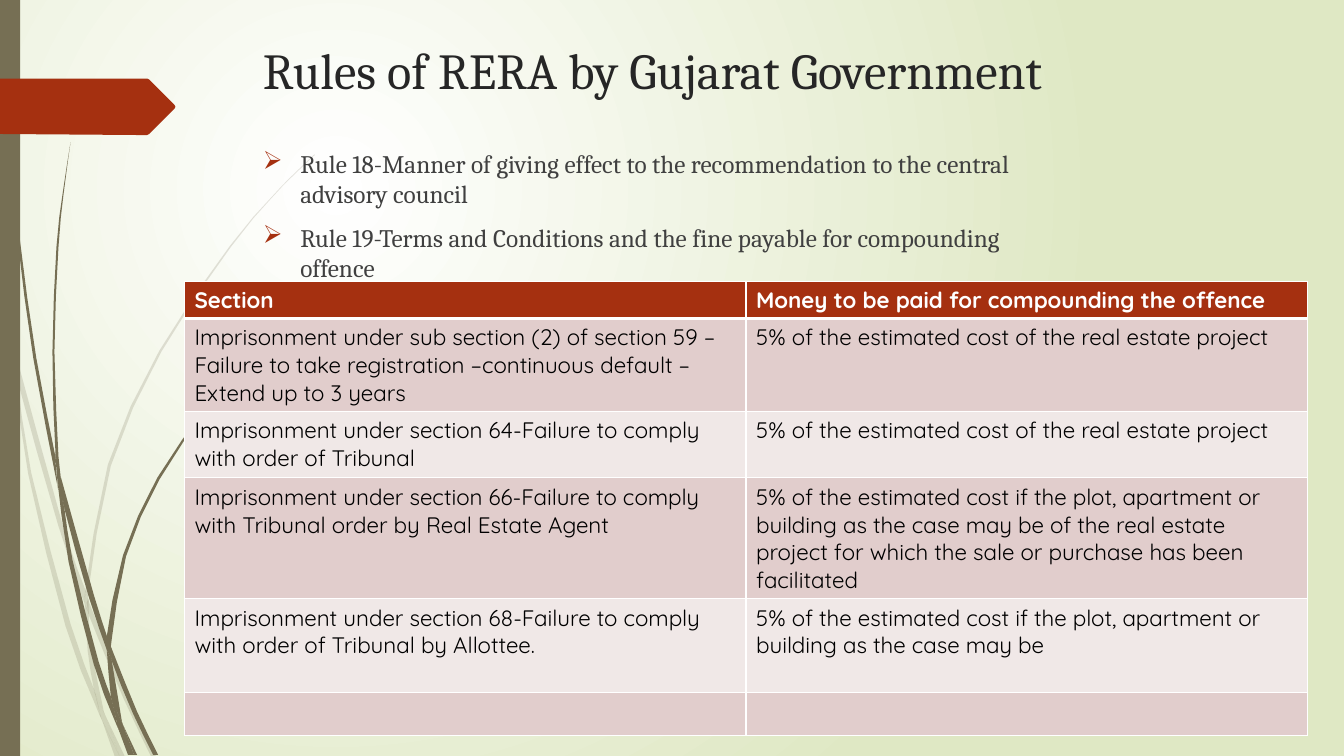
from lxml.etree import SubElement
from pptx import Presentation
from pptx.dml.color import RGBColor
from pptx.enum.shapes import MSO_SHAPE
from pptx.enum.text import MSO_ANCHOR
from pptx.oxml import parse_xml
from pptx.oxml.ns import nsdecls, qn
from pptx.util import Pt

PX = 9144
COLORS = {
    "white": "FFFFFF", "meadow": "DFE8C4", "olive": "766F54", "rust": "A53010",
    "title": "262626", "body": "404040", "black": "000000",
    "band_dark": "E1CDCC", "band_light": "F0E8E7",
}
SERIF, SANS = "Cambria", "Quicksand"

PALE_BLADES = [
    ([(11, 350), (9, 322), (0, 282)], [(0, 299), (10, 344), (11, 350)]),
    ([(14, 345), (17, 376), (58, 522), (84, 599)], [(85, 586), (62, 520), (14, 345)]),
    ([(88, 596), (88, 610), (123, 694), (150, 751)], [(155, 751), (127, 692), (92, 607), (88, 596)]),
    ([(119, 751), (124, 751)], [(105, 711), (119, 751)]),
    ([(11, 350), (28, 470), (65, 621), (92, 693), (101, 714)],
     [(99, 707), (93, 683), (70, 619), (31, 469), (17, 376), (11, 350)]),
    ([(84, 599), (87, 646), (93, 683), (96, 692), (105, 711)],
     [(103, 706), (91, 646), (88, 610), (88, 608), (84, 599)]),
    ([(312, 153), (289, 175), (268, 197), (228, 244), (158, 348), (107, 461), (85, 584), (85, 586)],
     [(88, 596), (88, 584), (110, 462), (160, 349), (229, 245), (268, 198), (290, 175), (312, 154)]),
    ([(101, 714), (114, 751)], [(119, 751), (101, 714)]),
    ([(88, 608), (88, 610), (88, 596)], [(85, 586), (84, 599), (88, 608)]),
    ([(93, 683), (99, 707), (101, 714), (119, 751)], [(105, 711), (96, 692), (93, 683)]),
]
DARK_BLADES = [
    ([(3, 0), (4, 48), (7, 110), (17, 233), (33, 355), (56, 477), (57, 481)],
     [(55, 457), (55, 453), (36, 355), (19, 232), (8, 109), (5, 48), (4, 0)]),
    ([(60, 472), (64, 505), (88, 592), (106, 645)], [(106, 633), (106, 631), (93, 590), (60, 472)]),
    ([(110, 641), (111, 656), (132, 708), (152, 749)], [(157, 749), (136, 706), (113, 649), (110, 641)]),
    ([(57, 477), (68, 557), (93, 659), (111, 708), (117, 722)],
     [(116, 717), (110, 691), (98, 657), (72, 556), (64, 505), (57, 477)]),
    ([(70, 141), (62, 193), (56, 245), (52, 349), (55, 449), (60, 472)],
     [(58, 453), (54, 349), (58, 245), (63, 193), (70, 141)]),
    ([(133, 749), (136, 749)], [(122, 719), (133, 749)]),
    ([(57, 477), (64, 505), (60, 472)], [(55, 449), (55, 453), (57, 477)]),
    ([(260, 344), (245, 358), (231, 373), (204, 405), (156, 474), (122, 551), (106, 631), (110, 641)],
     [(111, 633), (125, 552), (158, 476), (205, 406), (231, 374), (245, 359), (261, 344)]),
    ([(117, 722), (127, 749)], [(131, 749), (117, 722)]),
    ([(106, 645), (110, 691), (116, 706), (122, 719)],
     [(121, 716), (111, 656), (109, 651), (106, 645)]),
    ([(106, 645), (109, 651), (111, 656)], [(110, 641), (106, 631), (106, 645)]),
    ([(110, 691), (116, 717), (117, 722), (130, 749)], [(133, 749), (122, 719), (116, 706), (110, 691)]),
]
BANNER = [(0, 78), (146, 78), (148, 79), (173, 104), (174, 106), (173, 108),
          (148, 133), (146, 134), (136, 134), (0, 133)]
RULES = [
    "Rule 18-Manner of giving effect to the recommendation to the central advisory council",
    "Rule 19-Terms and Conditions and the fine payable for compounding offence",
]
PENALTIES = [
    ("Section", "Money to be paid for compounding the offence"),
    ("Imprisonment under sub section (2) of section 59 –Failure to take registration "
     "–continuous default – Extend up to 3 years",
     "5% of the estimated cost of the real estate project"),
    ("Imprisonment under section 64-Failure to comply with order of Tribunal",
     "5% of the estimated cost of the real estate project"),
    ("Imprisonment under section 66-Failure to comply with Tribunal order by Real Estate Agent",
     "5% of the estimated cost if the plot, apartment or building as the case may be of the "
     "real estate project for which the sale or purchase has been facilitated"),
    ("Imprisonment under section 68-Failure to comply with order of Tribunal by Allottee.",
     "5% of the estimated cost if the plot, apartment or building as the case may be"),
    ("", ""),
]
COLUMN_WIDTHS = [557, 557]
ROW_HEIGHTS = [37, 92, 66, 120, 93, 43]


def color(name):
    """Return a named colour."""
    return RGBColor.from_string(COLORS[name])


def lengths(*values):
    """Turn px into EMU."""
    return [value * PX for value in values]


def paint_background(page):
    """Fill the page with a radial gradient."""
    fill = page.background.fill
    fill.gradient()
    for stop, name, position in zip(fill.gradient_stops, ("white", "meadow"), (0, 1)):
        stop.color.rgb = color(name)
        stop.position = position
    linear = page.element.find(".//" + qn("a:lin"))
    radial = parse_xml(
        f'<a:path {nsdecls("a")} path="circle">'
        '<a:fillToRect l="50000" t="50000" r="100000" b="100000"/></a:path>')
    linear.getparent().replace(linear, radial)


def finish_shape(shape, name, alpha=100):
    """Give a shape a plain fill without line or shadow."""
    shape.shadow.inherit = False
    shape.fill.solid()
    shape.fill.fore_color.rgb = color(name)
    shape.line.fill.background()
    if alpha < 100:
        tone = shape.element.spPr.find(".//" + qn("a:srgbClr"))
        SubElement(tone, qn("a:alpha"), val=str(alpha * 1000))


def smooth(knots):
    """Add the Catmull-Rom midpoint between neighbouring knots."""
    padded = [knots[0], *knots, knots[-1]]
    points = []
    for a, b, c, d in zip(padded, padded[1:], padded[2:], padded[3:]):
        middle = tuple((9 * (q + r) - p - s) / 16 for p, q, r, s in zip(a, b, c, d))
        points += [b, middle]
    return points + [knots[-1]]


def add_outline(page, points, name, alpha=100):
    """Draw a closed filled outline."""
    scaled = [lengths(*point) for point in points]
    builder = page.shapes.build_freeform(*scaled[0], scale=1)
    builder.add_line_segments(scaled[1:], close=True)
    finish_shape(builder.convert_to_shape(), name, alpha)


def add_blades(page, blades, alpha):
    """Draw grass blades from their outward and returning edges."""
    for outward, returning in blades:
        add_outline(page, smooth(outward) + smooth(returning), "olive", alpha)


def style_text(para, font, size, name, bold=False):
    """Format every run of a paragraph."""
    for span in para.runs:
        span.font.name = font
        span.font.size = Pt(size)
        span.font.bold = bold
        span.font.color.rgb = color(name)


def add_text(page, place, lines, size, name):
    """Add a wrapping serif text box and return it."""
    box = page.shapes.add_textbox(*lengths(*place))
    frame = box.text_frame
    frame.word_wrap = True
    frame.vertical_anchor = MSO_ANCHOR.TOP
    frame.text = "\n".join(lines)
    for para in frame.paragraphs:
        style_text(para, SERIF, size, name)
    return box


def add_bullet(para):
    """Give a paragraph a hanging arrow bullet."""
    para.space_before = Pt(10)
    settings = para._p.get_or_add_pPr()
    indent = 37 * PX
    settings.set("marL", str(indent))
    settings.set("indent", str(-indent))
    tone = SubElement(settings, qn("a:buClr"))
    SubElement(tone, qn("a:srgbClr"), val=COLORS["rust"])
    SubElement(settings, qn("a:buSzPct"), val="100000")
    SubElement(settings, qn("a:buChar"), char="➢")


def add_borders(cell, bottom):
    """Draw white cell borders with the given bottom width."""
    settings = cell._tc.get_or_add_tcPr()
    for index, (side, width) in enumerate(zip("LRTB", (1, 1, 1, bottom))):
        settings.insert(index, parse_xml(
            f'<a:ln{side} {nsdecls("a")} w="{Pt(width)}"><a:solidFill>'
            f'<a:srgbClr val="{COLORS["white"]}"/></a:solidFill></a:ln{side}>'))


def add_penalty_table(page):
    """Add the banded table of compounding amounts."""
    table = page.shapes.add_table(
        len(ROW_HEIGHTS), len(COLUMN_WIDTHS),
        *lengths(183, 279, sum(COLUMN_WIDTHS), sum(ROW_HEIGHTS))).table
    for column, width in zip(table.columns, COLUMN_WIDTHS):
        column.width = width * PX
    for index, (row, height) in enumerate(zip(table.rows, ROW_HEIGHTS)):
        row.height = height * PX
        header = index == 0
        band = "rust" if header else ("band_light", "band_dark")[index % 2]
        for cell, text in zip(row.cells, PENALTIES[index]):
            cell.text = text
            cell.fill.solid()
            cell.fill.fore_color.rgb = color(band)
            style_text(cell.text_frame.paragraphs[0], SANS, 16,
                       "white" if header else "black", header)
            add_borders(cell, 3 if header else 1)


def main():
    """Build the slide and save it."""
    deck = Presentation()
    deck.slide_width, deck.slide_height = lengths(1333, 750)
    page = deck.slides.add_slide(deck.slide_layouts[6])
    paint_background(page)
    add_blades(page, PALE_BLADES, 20)
    add_blades(page, DARK_BLADES, 100)
    edge = page.shapes.add_shape(MSO_SHAPE.RECTANGLE, *lengths(0, 0, 20, 750))
    finish_shape(edge, "olive")
    add_outline(page, BANNER, "rust")
    add_text(page, (251, 34, 975, 74), ["Rules of RERA by Gujarat Government"], 36, "title")
    rules = add_text(page, (251, 142, 975, 413), RULES, 18, "body")
    rules.text_frame.margin_right = 190 * PX
    for para in rules.text_frame.paragraphs:
        add_bullet(para)
    add_penalty_table(page)
    deck.save("out.pptx")


if __name__ == "__main__":
    main()
